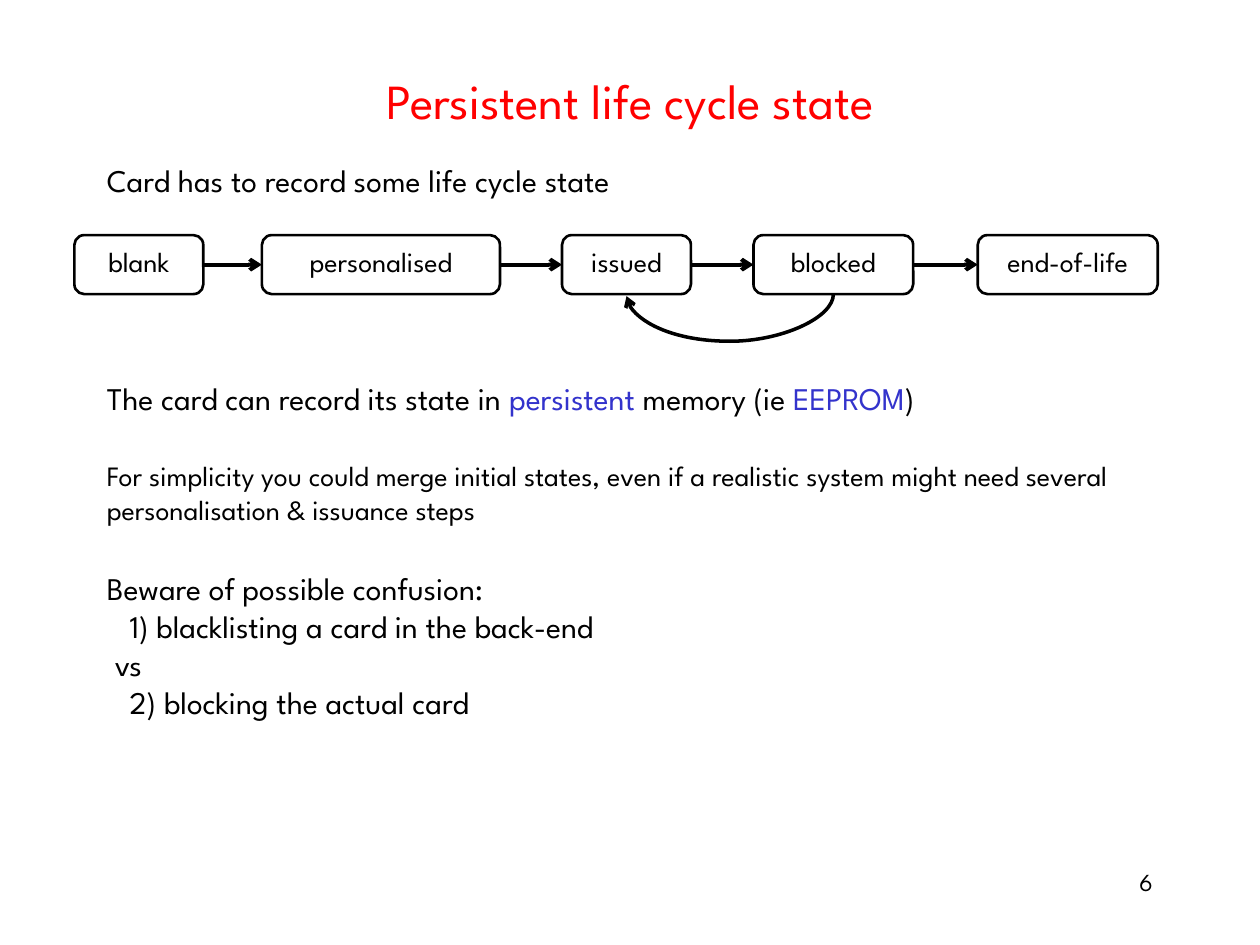
from lxml import etree
from pptx import Presentation
from pptx.dml.color import RGBColor
from pptx.enum.shapes import MSO_CONNECTOR, MSO_SHAPE
from pptx.enum.text import MSO_ANCHOR, MSO_AUTO_SIZE, PP_ALIGN
from pptx.oxml.ns import qn
from pptx.util import Cm, Pt

FONT = "League Spartan"
BLACK, RED, BLUE = "000000", "FF0000", "3333CC"
LEFT, CENTER, RIGHT = PP_ALIGN.LEFT, PP_ALIGN.CENTER, PP_ALIGN.RIGHT
TOP, MIDDLE = MSO_ANCHOR.TOP, MSO_ANCHOR.MIDDLE
STRAIGHT, CURVE = MSO_CONNECTOR.STRAIGHT, MSO_CONNECTOR.CURVE
ROUNDED, NO_FIT = MSO_SHAPE.ROUNDED_RECTANGLE, MSO_AUTO_SIZE.NONE

STATES = [
    ("blank", 0, 2.6),
    ("personalised", 3.78, 4.8),
    ("issued", 9.83, 2.6),
    ("blocked", 13.69, 3.22),
    ("end-of-life", 18.21, 3.63),
]
BODY = [
    ([("Card has to record some life cycle state", BLACK)], 18, 0, 0),
    ([("The card can record its state in ", BLACK), ("persistent", BLUE),
      (" memory (ie ", BLACK), ("EEPROM", BLUE), (")", BLACK)], 18, 103, 0),
    ([("For simplicity you could merge initial states, even if a realistic system "
       "might need several personalisation & issuance steps", BLACK)], 16, 24, 0),
    ([("Beware of possible confusion:", BLACK)], 18, 24.6, 0),
    ([("1) blacklisting a card in the back-end", BLACK)], 18, 0, 0.46),
    ([("vs", BLACK)], 18, 0, 0.16),
    ([("2) blocking the actual card", BLACK)], 18, 0, 0.46),
]


def rgb(value):
    return RGBColor.from_string(value)


def add_text(p, text, size=18, color=BLACK, align=LEFT, before=0):
    p.alignment = align
    p.space_before = Pt(before)
    r = p.add_run()
    r.text = text
    r.font.name = FONT
    r.font.size = Pt(size)
    r.font.color.rgb = rgb(color)


def place(s, left, top, width, height, anchor=TOP):
    s.left, s.top, s.width, s.height = Cm(left), Cm(top), Cm(width), Cm(height)
    tf = s.text_frame
    tf.word_wrap = True
    tf.auto_size = NO_FIT
    tf.vertical_anchor = anchor
    return tf


def add_title(slide, left, top, width, height):
    tf = place(slide.shapes.title, left, top, width, height, MIDDLE)
    add_text(tf.paragraphs[0], "Persistent life cycle state", size=28, color=RED, align=CENTER)


def add_body(slide, left, top, width, height):
    tf = place(slide.placeholders[1], left, top, width, height)
    for i, (runs, size, before, indent) in enumerate(BODY):
        p = tf.paragraphs[0] if i == 0 else tf.add_paragraph()
        pPr = p._p.get_or_add_pPr()
        pPr.set("marL", str(Cm(indent)))
        pPr.set("indent", "0")
        etree.SubElement(pPr, qn("a:buNone"))
        for text, color in runs:
            add_text(p, text, size=size, color=color, before=before)


def add_arrow(slide, kind, x1, y1, x2, y2, weight):
    s = slide.shapes.add_connector(kind, Cm(x1), Cm(y1), Cm(x2), Cm(y2))
    s.line.color.rgb = rgb(BLACK)
    s.line.width = Pt(weight)
    etree.SubElement(s.line._get_or_add_ln(), qn("a:tailEnd"), type="arrow")
    etree.SubElement(s._element.spPr, qn("a:effectLst"))
    return s


def add_return_arrow(slide, x1, x2, y, drop):
    span, depth = x1 - x2, 0.04
    mid_x, mid_y = (x1 + x2) / 2, y + depth / 2
    s = add_arrow(slide, CURVE, mid_x - depth / 2, mid_y - span / 2,
                  mid_x + depth / 2, mid_y + span / 2, 2)
    spPr = s._element.spPr
    spPr.find(qn("a:xfrm")).set("rot", "5400000")
    guides = spPr.find(qn("a:prstGeom")).get_or_add_avLst()
    etree.SubElement(guides, qn("a:gd"), name="adj1",
                     fmla=f"val {round(drop / depth * 100000)}")


def add_life_cycle(slide, left, top, height):
    for name, x, width in STATES:
        s = slide.shapes.add_shape(ROUNDED, 0, 0, 0, 0)
        s.shadow.inherit = False
        s.fill.background()
        s.line.color.rgb = rgb(BLACK)
        s.line.width = Pt(1.5)
        tf = place(s, left + x, top, width, height)
        add_text(tf.paragraphs[0], name, size=16, align=CENTER)
    middle = top + height / 2
    for (_, x, width), (_, next_x, _) in zip(STATES, STATES[1:]):
        add_arrow(slide, STRAIGHT, left + x + width, middle, left + next_x, middle, 2.25)
    centers = {name: left + x + width / 2 for name, x, width in STATES}
    add_return_arrow(slide, centers["blocked"], centers["issued"], top + height, 0.95)


def add_page_number(slide, left, top, width, height):
    s = slide.shapes.add_textbox(0, 0, 0, 0)
    tf = place(s, left, top, width, height)
    add_text(tf.paragraphs[0], "6", size=14, align=RIGHT)


def main():
    prs = Presentation()
    prs.slide_width, prs.slide_height = Cm(25.4), Cm(19.05)
    slide = prs.slides.add_slide(prs.slide_layouts[1])
    add_title(slide, 1.9, 0.91, 21.6, 2.21)
    add_body(slide, 1.9, 3.12, 21.6, 12.8)
    add_page_number(slide, 18.21, 17.35, 5.28, 1.27)
    add_life_cycle(slide, 1.5, 4.74, 1.19)
    prs.save("out.pptx")


if __name__ == "__main__":
    main()
